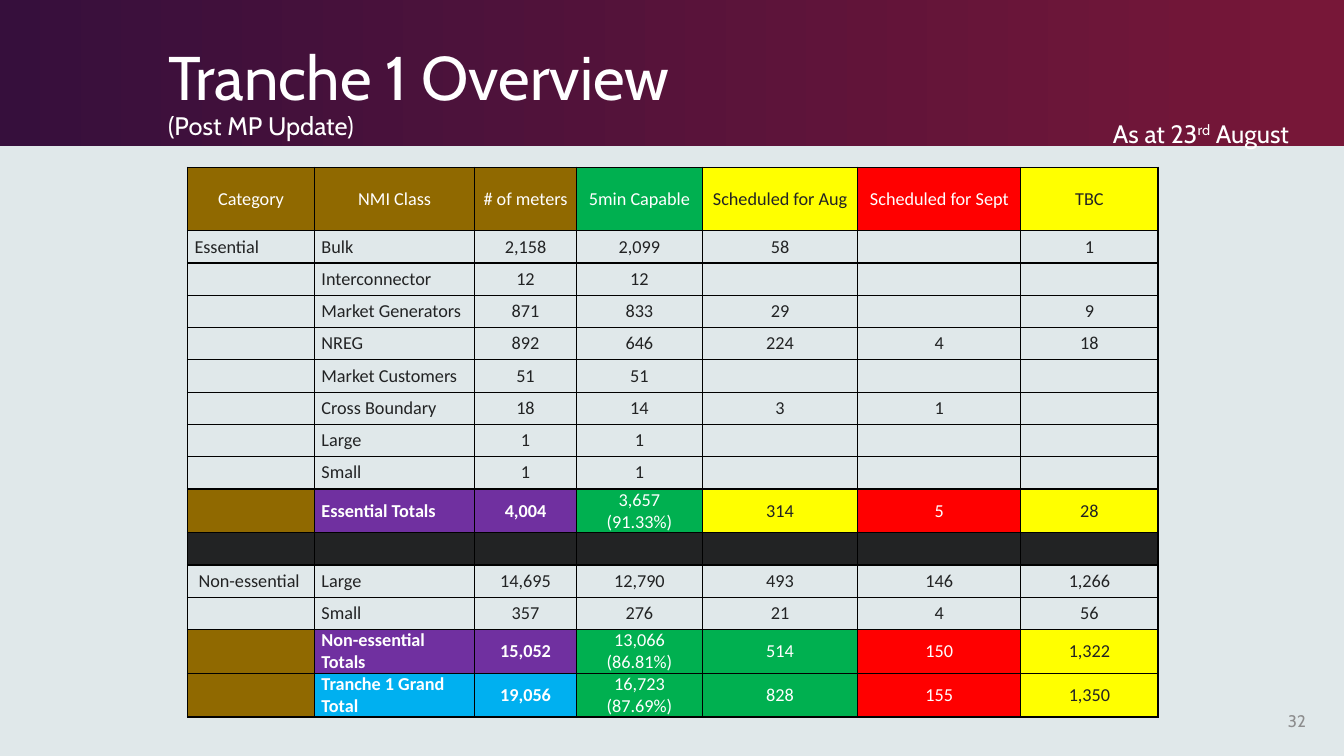
"""Build the Tranche 1 metering overview slide."""
from dataclasses import dataclass
from typing import Optional

from lxml.etree import SubElement
from pptx import Presentation
from pptx.dml.color import RGBColor
from pptx.enum.shapes import MSO_SHAPE
from pptx.enum.text import MSO_ANCHOR, PP_ALIGN
from pptx.oxml import parse_xml
from pptx.oxml.ns import nsdecls, qn
from pptx.util import Emu, Inches, Pt

SLIDE_WIDTH, SLIDE_HEIGHT = Inches(13.33), Inches(7.5)
WHITE, BLACK, INK, GREY = "FFFFFF", "000000", "222324", "8D8D8E"
BROWN, GREEN, YELLOW, RED = "906900", "00B050", "FFFF00", "FF0000"
PURPLE, BLUE = "7030A0", "00B0F0"
DARK_TEXT_FILLS = (None, YELLOW)
BOLD_FILLS = (PURPLE, BLUE)
COLUMN_SHARES = (9.45, 11.92, 7.57, 9.38, 11.55, 12.15, 10.2)
HEADER_ROW, DATA_ROW, TOTAL_ROW = 8.4, 4.27, 5.6


@dataclass(frozen=True)
class Box:
    """A rectangle in percent of the slide's width and height."""
    left: float
    top: float
    width: float
    height: float

    def lengths(self) -> tuple[Emu, Emu, Emu, Emu]:
        """Return left, top, width and height as lengths."""
        return across(self.left), down(self.top), across(self.width), down(self.height)


@dataclass(frozen=True)
class TextPart:
    """A stretch of text with an optional size and superscript."""
    text: str
    size: Optional[float] = None
    raised: bool = False


@dataclass(frozen=True)
class TableRow:
    """One table row: its texts, cell fills and height share."""
    texts: tuple[str, ...] = ("",) * 7
    fills: tuple[Optional[str], ...] = (None,) * 7
    height: float = DATA_ROW
    header: bool = False


ROWS = (
    TableRow(("Category", "NMI Class", "# of meters", "5min Capable",
              "Scheduled for Aug", "Scheduled for Sept", "TBC"),
             (BROWN, BROWN, BROWN, GREEN, YELLOW, RED, YELLOW), HEADER_ROW, True),
    TableRow(("Essential", "Bulk", "2,158", "2,099", "58", "", "1")),
    TableRow(("", "Interconnector", "12", "12", "", "", "")),
    TableRow(("", "Market Generators", "871", "833", "29", "", "9")),
    TableRow(("", "NREG", "892", "646", "224", "4", "18")),
    TableRow(("", "Market Customers", "51", "51", "", "", "")),
    TableRow(("", "Cross Boundary", "18", "14", "3", "1", "")),
    TableRow(("", "Large", "1", "1", "", "", "")),
    TableRow(("", "Small", "1", "1", "", "", "")),
    TableRow(("", "Essential Totals", "4,004", "3,657\n(91.33%)", "314", "5", "28"),
             (BROWN, PURPLE, PURPLE, GREEN, YELLOW, RED, YELLOW), TOTAL_ROW),
    TableRow(fills=(INK,) * 7),
    TableRow((" Non-essential", "Large", "14,695", "12,790", "493", "146", "1,266")),
    TableRow(("", "Small", "357", "276", "21", "4", "56")),
    TableRow(("", "Non-essential Totals", "15,052", "13,066 (86.81%)", "514", "150", "1,322"),
             (BROWN, PURPLE, PURPLE, GREEN, GREEN, RED, YELLOW), TOTAL_ROW),
    TableRow(("", "Tranche 1 Grand Total", "19,056", "16,723 (87.69%)", "828", "155", "1,350"),
             (BROWN, BLUE, BLUE, GREEN, GREEN, RED, YELLOW), TOTAL_ROW),
)


def across(share: float) -> Emu:
    """Turn a percentage of the slide's width into a length."""
    return Emu(round(SLIDE_WIDTH * share / 100))


def down(share: float) -> Emu:
    """Turn a percentage of the slide's height into a length."""
    return Emu(round(SLIDE_HEIGHT * share / 100))


def colour(value: str) -> RGBColor:
    """Turn a hex string into a colour."""
    return RGBColor.from_string(value)


def set_font(font, name: str, size: float, value: str, bold: bool = False) -> None:
    """Set a font's name, size, colour and weight."""
    font.name, font.size, font.bold = name, Pt(size), bold
    font.color.rgb = colour(value)


def add_banner(slide, box: Box) -> None:
    """Draw the gradient band at the top."""
    banner = slide.shapes.add_shape(MSO_SHAPE.RECTANGLE, *box.lengths())
    banner.shadow.inherit = False
    banner.line.fill.background()
    banner.fill.gradient()
    banner.fill.gradient_angle = 0
    for stop, (position, value) in zip(banner.fill.gradient_stops,
                                       ((0, "360F3C"), (0.99, "771738"))):
        stop.position = position
        stop.color.rgb = colour(value)


def add_text(slide, box: Box, lines: tuple[tuple[TextPart, ...], ...], size: float,
             value: str = WHITE, anchor=MSO_ANCHOR.TOP, align=PP_ALIGN.LEFT,
             spacing: float = 1.0) -> None:
    """Add a one-paragraph text box whose lines are made of parts."""
    frame = slide.shapes.add_textbox(*box.lengths()).text_frame
    frame.word_wrap = True
    frame.vertical_anchor = anchor
    paragraph = frame.paragraphs[0]
    paragraph.alignment, paragraph.line_spacing = align, spacing
    set_font(paragraph.font, "Cabin", size, value)
    for index, line in enumerate(lines):
        if index:
            paragraph.add_line_break()
        for part in line:
            run = paragraph.add_run()
            run.text = part.text
            if part.size:
                run.font.size = Pt(part.size)
            if part.raised:
                run.font._element.set("baseline", "30000")


def add_borders(cell) -> None:
    """Give a cell thin black lines on all four sides."""
    properties = cell._tc.get_or_add_tcPr()
    for index, side in enumerate(("lnL", "lnR", "lnT", "lnB")):
        line = parse_xml(f'<a:{side} {nsdecls("a")} w="{Pt(1)}"/>')
        fill = SubElement(line, qn("a:solidFill"))
        SubElement(fill, qn("a:srgbClr")).set("val", BLACK)
        properties.insert(index, line)


def fill_cell(cell, text: str, fill: Optional[str], align) -> None:
    """Write and style one table cell."""
    cell.text = text
    cell.vertical_anchor = MSO_ANCHOR.MIDDLE
    cell.margin_left = cell.margin_right = Inches(0.07)
    cell.margin_top = cell.margin_bottom = 0
    if fill:
        cell.fill.solid()
        cell.fill.fore_color.rgb = colour(fill)
    else:
        cell.fill.background()
    add_borders(cell)
    for paragraph in cell.text_frame.paragraphs:
        paragraph.alignment = align
        set_font(paragraph.font, "Calibri", 13,
                 INK if fill in DARK_TEXT_FILLS else WHITE, fill in BOLD_FILLS)


def add_meter_table(slide, left: float, top: float) -> None:
    """Add the table of meters by category and class."""
    box = Box(left, top, sum(COLUMN_SHARES), sum(row.height for row in ROWS))
    table = slide.shapes.add_table(len(ROWS), len(COLUMN_SHARES), *box.lengths()).table
    table.first_row = table.horz_banding = False
    for column, share in zip(table.columns, COLUMN_SHARES):
        column.width = across(share)
    for table_row, row in zip(table.rows, ROWS):
        table_row.height = down(row.height)
        for index, (cell, text, fill) in enumerate(zip(table_row.cells, row.texts, row.fills)):
            centred = row.header or index > 1
            fill_cell(cell, text, fill, PP_ALIGN.CENTER if centred else PP_ALIGN.LEFT)


def main() -> None:
    """Build and save the presentation."""
    presentation = Presentation()
    presentation.slide_width, presentation.slide_height = SLIDE_WIDTH, SLIDE_HEIGHT
    slide = presentation.slides.add_slide(presentation.slide_layouts[6])
    slide.background.fill.solid()
    slide.background.fill.fore_color.rgb = colour("E0E8EA")
    add_banner(slide, Box(0, 0, 100, 19.33))
    add_text(slide, Box(11.78, 2, 67.29, 17.33),
             ((TextPart("Tranche 1 Overview"),), (TextPart("(Post MP Update)", 18.1),)),
             44, anchor=MSO_ANCHOR.BOTTOM, spacing=0.9)
    add_text(slide, Box(93.17, 92.67, 4.73, 5.33), ((TextPart("32"),),), 12, GREY,
             MSO_ANCHOR.MIDDLE, PP_ALIGN.RIGHT)
    add_meter_table(slide, 13.95, 22.13)
    add_text(slide, Box(82.07, 14.93, 15.83, 5.33),
             ((TextPart("As at 23"), TextPart("rd", raised=True), TextPart(" August")),), 18)
    presentation.save("out.pptx")


if __name__ == "__main__":
    main()
